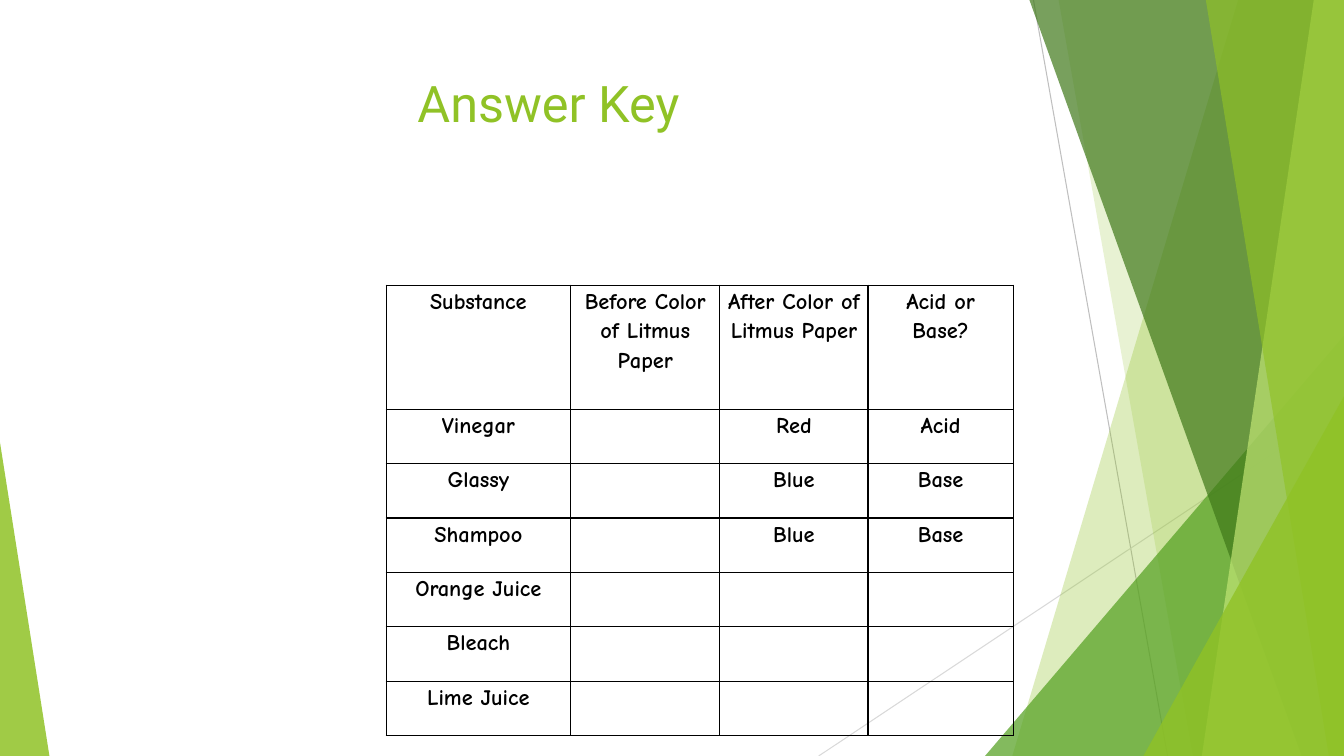
import pptx
import pptx.util
import pptx.dml.color
import pptx.enum.shapes
import pptx.enum.text
import pptx.oxml
import pptx.oxml.ns

W, H = 13.33, 7.5
GREEN = "90C226"
CENTER = pptx.enum.text.PP_ALIGN.CENTER

# Content
TITLE = "Answer Key"
ROWS = [
    ("Substance", "Before Color of Litmus Paper", "After Color of Litmus Paper", "Acid or Base?"),
    ("Vinegar", "", "Red", "Acid"),
    ("Glassy", "", "Blue", "Base"),
    ("Shampoo", "", "Blue", "Base"),
    ("Orange Juice", "", "", ""),
    ("Bleach", "", "", ""),
    ("Lime Juice", "", "", ""),
]
TITLE_BOX = (0.74, 0.67, 9.4, 1.44)
TABLE_AT = (3.83, 2.83)
COL_WIDTHS = (1.83, 1.48, 1.47, 1.44)
HEADER_H, ROW_H = 1.23, 0.54

TITLE_FONT = {"size": pptx.util.Pt(36), "name": "Roboto"}
CELL_FONT = {"size": pptx.util.Pt(16), "name": "Comic Neue", "bold": True}
CELL_FORMAT = {"margin_left": pptx.util.Inches(0.07), "margin_right": pptx.util.Inches(0.07),
               "margin_top": 0, "margin_bottom": 0}

# Decoration, back to front
RULES = [((10.25, 0), (11.58, H), "BFBFBF"), ((W, 4.03), (8.12, H), "D9D9D9")]
# band: left edge at top, left edge at bottom; triangle: left, top, width, apex
FACETS = [
    ("band", (12.28, 10.04), GREEN, 30),
    ("band", (10.5, 11.83), GREEN, 20),
    ("triangle", (9.77, 3.33, 3.56, 1), "54A021", 72),
    ("band", (10.21, 12.91), "3F7819", 70),
    ("band", (13.03, 11.92), "C0E474", 70),
    ("band", (11.96, 13.18), GREEN, 65),
    ("triangle", (11.34, 3.93, 1.99, 1), GREEN, 80),
    ("triangle", (0, 4.39, 0.49, 0), GREEN, 85),
]


def inches(*values):
    return [pptx.util.Inches(v) for v in values]


def color(value):
    return pptx.dml.color.RGBColor.from_string(value)


def apply(obj, formats):
    for name, value in formats.items():
        setattr(obj, name, value)


def add_xml(parent, tag, body=""):
    ns = pptx.oxml.ns.nsdecls("a")
    name = tag.split()[0]
    parent.append(pptx.oxml.parse_xml(f"<a:{tag} {ns}>{body}</a:{name}>"))


def add_rule(shapes, start, end, hue):
    line = shapes.add_connector(pptx.enum.shapes.MSO_CONNECTOR.STRAIGHT, *inches(*start, *end))
    line.line.color.rgb = color(hue)
    line.line.width = pptx.util.Pt(0.75)
    add_xml(line._element.spPr, "effectLst")


def add_facet(shapes, kind, place, hue, opacity):
    if kind == "band":
        top, bottom = place
        builder = shapes.build_freeform(*inches(top, 0))
        builder.add_line_segments([inches(*pt) for pt in ((W, 0), (W, H), (bottom, H))])
        sp = builder.convert_to_shape()
    else:
        left, top, width, apex = place
        sp = shapes.add_shape(pptx.enum.shapes.MSO_SHAPE.ISOSCELES_TRIANGLE,
                              *inches(left, top, width, H - top))
        sp.adjustments[0] = apex
    sp.shadow.inherit = False
    sp.line.fill.background()
    sp.fill.solid()
    sp.fill.fore_color.rgb = color(hue)
    add_xml(sp.fill._xPr.find(".//" + pptx.oxml.ns.qn("a:srgbClr")),
            f'alpha val="{opacity * 1000}"')


def write(tf, text, font, hue):
    p = tf.paragraphs[0]
    p.alignment = CENTER
    r = p.add_run()
    r.text = text
    apply(r.font, font)
    r.font.color.rgb = color(hue)
    return p


def add_answers(shapes):
    height = HEADER_H + ROW_H * (len(ROWS) - 1)
    frame = shapes.add_table(len(ROWS), len(COL_WIDTHS),
                             *inches(*TABLE_AT, sum(COL_WIDTHS), height))
    table = frame.table
    apply(table, {"first_row": False, "horz_banding": False})
    for col, width in zip(table.columns, COL_WIDTHS):
        col.width = pptx.util.Inches(width)
    for i, texts in enumerate(ROWS):
        table.rows[i].height = pptx.util.Inches(ROW_H if i else HEADER_H)
        for j, text in enumerate(texts):
            cell = table.cell(i, j)
            apply(cell, CELL_FORMAT)
            for side in "LRTB":
                add_xml(cell._tc.get_or_add_tcPr(), f'ln{side} w="12700"',
                        '<a:solidFill><a:srgbClr val="000000"/></a:solidFill>')
            cell.fill.background()
            if text:
                write(cell.text_frame, text, CELL_FONT, "000000").line_spacing = 1.15


def main():
    prs = pptx.Presentation()
    prs.slide_width, prs.slide_height = inches(W, H)
    shapes = prs.slides.add_slide(prs.slide_layouts[6]).shapes

    # Background facets
    for rule in RULES:
        add_rule(shapes, *rule)
    for facet in FACETS:
        add_facet(shapes, *facet)

    # Title
    tf = shapes.add_textbox(*inches(*TITLE_BOX)).text_frame
    tf.word_wrap = True
    write(tf, TITLE, TITLE_FONT, GREEN)

    # Answer table
    add_answers(shapes)
    prs.save("out.pptx")


if __name__ == "__main__":
    main()
